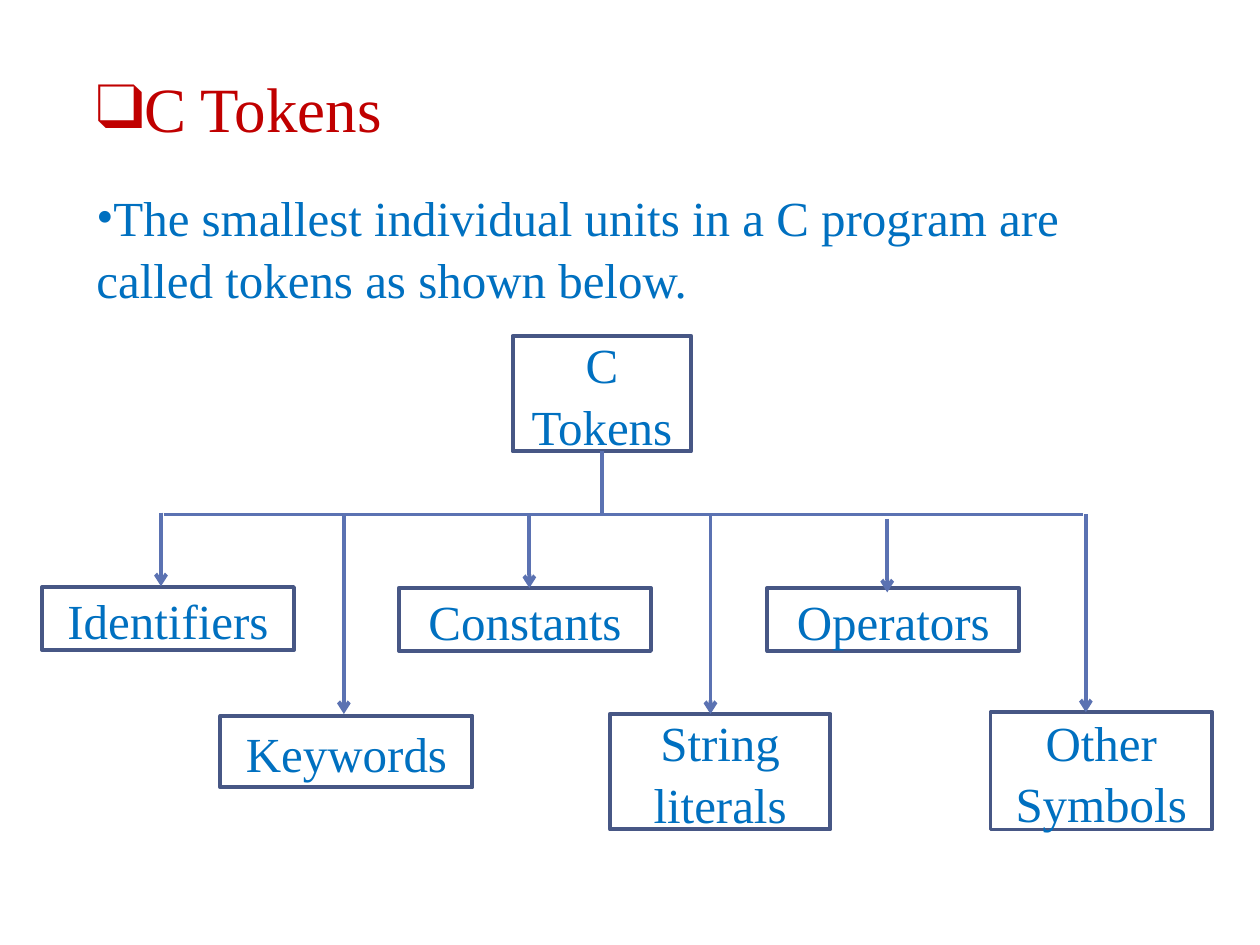
from lxml.etree import SubElement
from pptx import Presentation
from pptx.dml.color import RGBColor
from pptx.enum.shapes import MSO_CONNECTOR, MSO_SHAPE
from pptx.enum.text import MSO_ANCHOR, PP_ALIGN
from pptx.oxml.ns import qn
from pptx.util import Pt

FONT = "Times New Roman"
TEXT_BLUE = "0070C0"
TITLE_RED = "C00000"
BOX_EDGE = "475785"
BRANCH = "5B72B2"
BUS_Y = 294

TOKENS = [
    ("Identifiers", (24, 335.5, 144, 36), (92, 293, 335)),
    ("Keywords", (126, 409, 144, 41), (196.5, BUS_Y, 408)),
    ("Constants", (228, 336, 144, 36), (302.5, BUS_Y, 336)),
    ("String literals", (348.5, 408, 126, 66), (406, BUS_Y, 408)),
    ("Operators", (438.5, 336, 144, 36), (507, 296.5, 338.5)),
    ("Other Symbols", (566, 407, 126.5, 67), (620.5, BUS_Y, 407)),
]


def color(value):
    """Turn a hex string into a colour."""
    return RGBColor.from_string(value)


def write(shape, text, size, ink, spacing):
    """Fill a shape with one styled paragraph and return it."""
    frame = shape.text_frame
    frame.word_wrap = True
    paragraph = frame.paragraphs[0]
    paragraph.text = text
    paragraph.line_spacing = spacing
    paragraph.font.name = FONT
    paragraph.font.size = Pt(size)
    paragraph.font.color.rgb = color(ink)
    return paragraph


def add_bulleted(slide, bounds, text, mark, size, ink, spacing=1.0):
    """Add a text box whose bullet stands directly before the text."""
    box = slide.shapes.add_textbox(*map(Pt, bounds))
    properties = write(box, text, size, ink, spacing)._p.get_or_add_pPr()
    properties.set("marL", "0")
    properties.set("indent", "0")
    SubElement(properties, qn("a:buFont")).set("typeface", FONT)
    SubElement(properties, qn("a:buChar")).set("char", mark)


def add_box(slide, bounds, text, preset=MSO_SHAPE.FLOWCHART_PROCESS):
    """Add an outlined white box with centred text."""
    box = slide.shapes.add_shape(preset, *map(Pt, bounds))
    box.shadow.inherit = False
    box.fill.solid()
    box.fill.fore_color.rgb = color("FFFFFF")
    box.line.color.rgb = color(BOX_EDGE)
    box.line.width = Pt(2.25)
    box.text_frame.vertical_anchor = MSO_ANCHOR.MIDDLE
    write(box, text, 28, TEXT_BLUE, 1.05).alignment = PP_ALIGN.CENTER


def add_branch(slide, start, end, arrow=False):
    """Add a straight line of the tree, with an arrowhead if wanted."""
    branch = slide.shapes.add_connector(
        MSO_CONNECTOR.STRAIGHT, *map(Pt, start + end))
    branch.line.color.rgb = color(BRANCH)
    branch.line.width = Pt(2.25)
    if arrow:
        SubElement(branch.line._get_or_add_ln(), qn("a:tailEnd")).set("type", "arrow")
    SubElement(branch._element.spPr, qn("a:effectLst"))


def main():
    """Build the slide and save it."""
    deck = Presentation()
    deck.slide_width, deck.slide_height = Pt(720), Pt(540)
    slide = deck.slides.add_slide(deck.slide_layouts[6])

    add_bulleted(slide, (48, 36, 330, 42), "C Tokens", "❑", 36, TITLE_RED)
    add_bulleted(
        slide, (48, 102, 636, 372),
        "The smallest individual units in a C program are called tokens as shown below.",
        "•", 28, TEXT_BLUE, 1.05)

    add_box(slide, (293, 192, 102, 66), "C Tokens")
    add_branch(slide, (344, 258), (344, BUS_Y))
    add_branch(slide, (93.5, BUS_Y), (619, BUS_Y))
    for token, bounds, (x, top, bottom) in TOKENS:
        preset = MSO_SHAPE.RECTANGLE if token == "Identifiers" else MSO_SHAPE.FLOWCHART_PROCESS
        add_box(slide, bounds, token, preset)
        add_branch(slide, (x, top), (x, bottom), arrow=True)

    deck.save("out.pptx")


if __name__ == "__main__":
    main()
